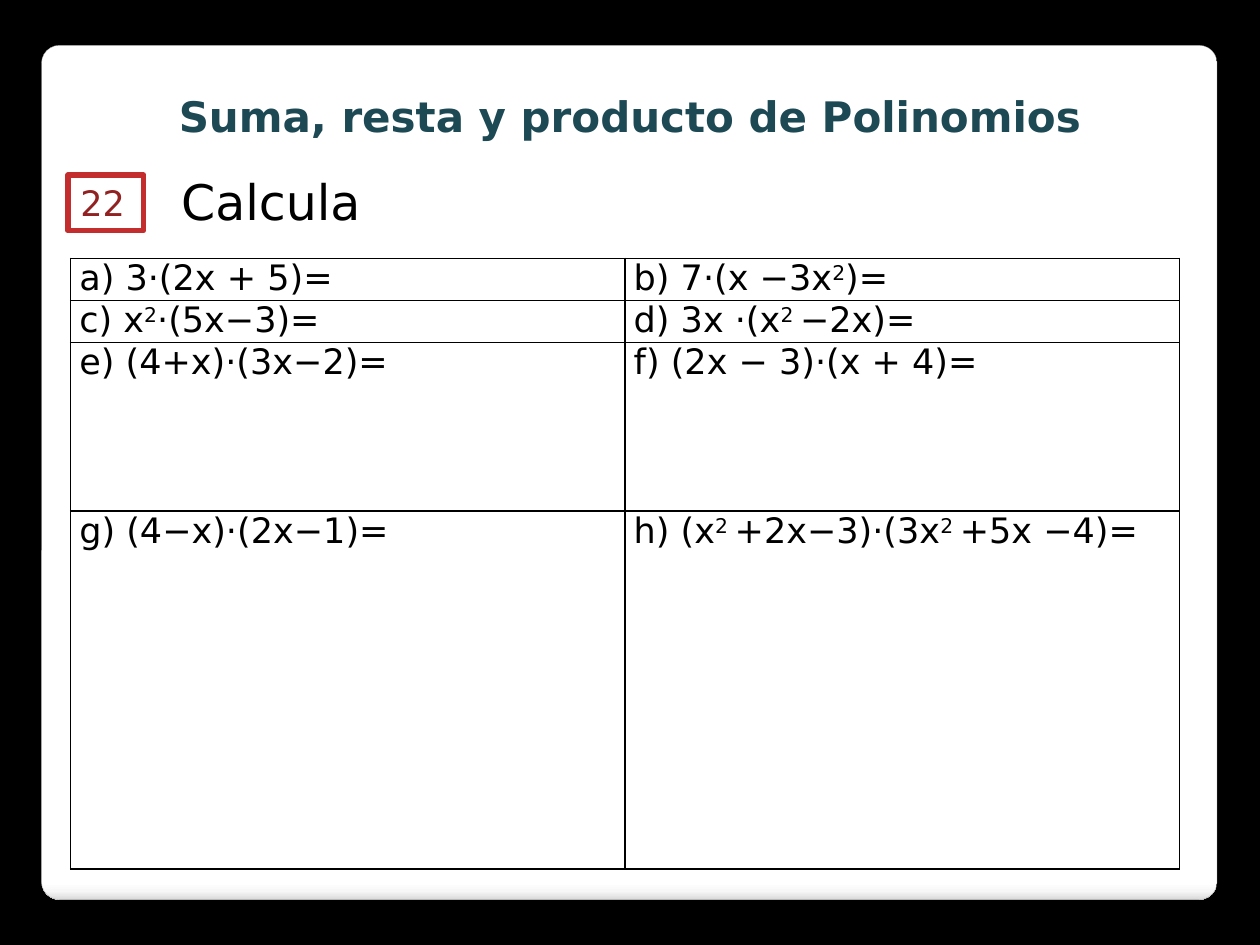
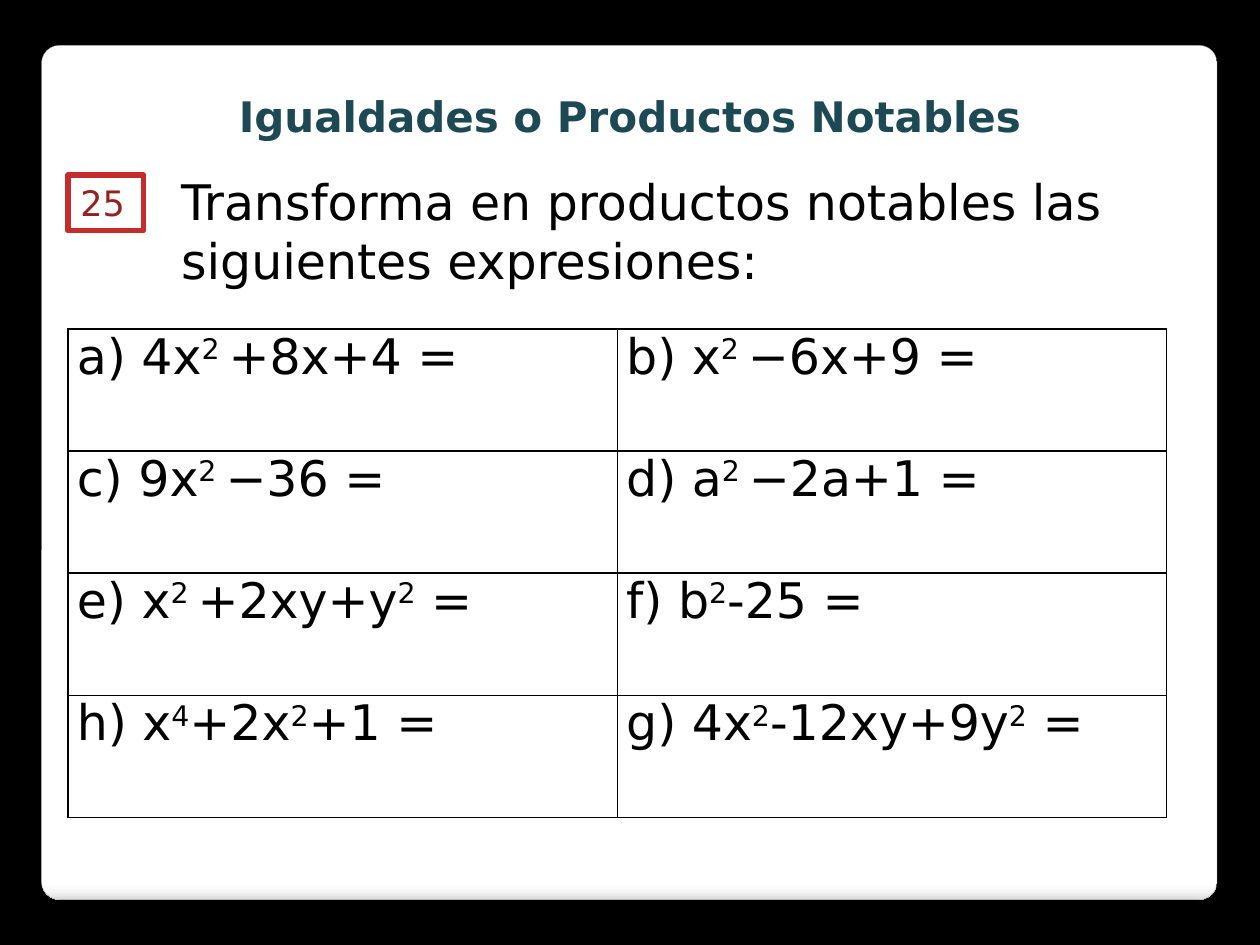
"""Builds two maths worksheet slides: polynomial products and notable products."""
from dataclasses import dataclass

from lxml.etree import SubElement
from pptx import Presentation
from pptx.dml.color import RGBColor
from pptx.enum.shapes import MSO_SHAPE as SHAPE
from pptx.enum.text import MSO_ANCHOR as ANCHOR, PP_ALIGN as ALIGN
from pptx.oxml import parse_xml
from pptx.oxml.ns import nsdecls, qn
from pptx.util import Inches, Pt

FONT = "DejaVu Sans"
COLORS = {
    "background": "000000",
    "paper": "FFFFFF",
    "paper_edge": "F7F7F7",
    "paper_shade": "DADADA",
    "paper_line": "A4A4A4",
    "title": "1C4954",
    "badge_line": "C32D2E",
    "badge_text": "922222",
    "ink": "000000",
}
CARD_STOPS = ((0, "paper"), (98, "paper"), (99, "paper_edge"), (100, "paper_shade"))


@dataclass(frozen=True)
class Exercise:
    """One worksheet slide; exponents in the cells stand between bars."""
    title: str
    number: str
    task: str
    task_height: float
    left: float
    top: float
    col_width: float
    row_heights: tuple[float, ...]
    size: int
    cells: tuple[tuple[str, str], ...]


EXERCISES = (
    Exercise(
        "Suma, resta y producto de Polinomios", "22", "Calcula", 0.57,
        0.56, 2.05, 4.4, (0.33, 0.33, 1.34, 2.84), 20,
        (
            ("a) 3·(2x + 5)=", "b) 7·(x −3x|2|)="),
            ("c) x|2|·(5x−3)=", "d) 3x ·(x|2 |−2x)="),
            ("e) (4+x)·(3x−2)=", "f) (2x − 3)·(x + 4)="),
            ("g) (4−x)·(2x−1)=", "h) (x|2 |+2x−3)·(3x|2 |+5x −4)="),
        ),
    ),
    Exercise(
        "Igualdades o Productos Notables", "25",
        "Transforma en productos notables las siguientes expresiones:", 1.04,
        0.54, 2.61, 4.36, (0.97,) * 4, 28,
        (
            ("a) 4x|2 |+8x+4 =", "b) x|2 |−6x+9 ="),
            ("c) 9x|2 |−36 =", "d) a|2 |−2a+1 ="),
            ("e) x|2 |+2xy+y|2| =", "f) b|2|-25 ="),
            ("h) x|4|+2x|2|+1 =", "g) 4x|2|-12xy+9y|2| ="),
        ),
    ),
)


def rgb(name: str) -> RGBColor:
    """Return the palette colour of that name."""
    return RGBColor.from_string(COLORS[name])


def write(tf, text: str, *, size: int, color: str = "ink", bold: bool = False,
          align=ALIGN.LEFT, anchor=ANCHOR.TOP) -> None:
    """Write one formatted paragraph, raising the parts between bars."""
    tf.word_wrap = True
    tf.vertical_anchor = anchor
    p = tf.paragraphs[0]
    p.alignment = align
    for i, part in enumerate(text.split("|")):
        r = p.add_run()
        r.text = part
        r.font.name, r.font.size, r.font.bold = FONT, Pt(size), bold
        r.font.color.rgb = rgb(color)
        if i % 2:
            r.font._element.set("baseline", "30000")


def place(sp, left: float, top: float, width: float, height: float) -> None:
    """Move and size a shape, in inches."""
    sp.left, sp.top = Inches(left), Inches(top)
    sp.width, sp.height = Inches(width), Inches(height)


def add_box(s, kind, box: tuple[float, ...], line: str, weight: float):
    """Add a paper-coloured preset shape with an outline."""
    sp = s.shapes.add_shape(kind, *map(Inches, box))
    sp.shadow.inherit = False
    sp.fill.solid()
    sp.fill.fore_color.rgb = rgb("paper")
    sp.line.color.rgb = rgb(line)
    sp.line.width = Pt(weight)
    return sp


def set_master(prs, s) -> None:
    """Give the master its black background and the white card, drawn via a slide."""
    master = prs.slide_master
    master.background.fill.solid()
    master.background.fill.fore_color.rgb = rgb("background")
    card = add_box(s, SHAPE.ROUNDED_RECTANGLE, (0.33, 0.36, 9.33, 6.78), "paper_line", 0.16)
    card.adjustments[0] = 0.021
    stops = "".join(
        f'<a:gs pos="{pos * 1000}"><a:srgbClr val="{COLORS[name]}"/></a:gs>'
        for pos, name in CARD_STOPS
    )
    solid = card.element.spPr.find(qn("a:solidFill"))
    solid.getparent().replace(solid, parse_xml(
        f'<a:gradFill {nsdecls("a")} rotWithShape="1"><a:gsLst>{stops}</a:gsLst>'
        '<a:lin ang="5400000" scaled="0"/></a:gradFill>'
    ))
    card.element.nvSpPr.cNvPr.set("id", "20")
    master.shapes.element.insert(2, card.element)


def format_cell(cell, text: str, size: int) -> None:
    """Write a cell and give it black borders on a paper fill."""
    cell.margin_left = cell.margin_right = Inches(0.07)
    cell.margin_top = cell.margin_bottom = 0
    write(cell.text_frame, text, size=size)
    tc_pr = cell._tc.get_or_add_tcPr()
    for side in ("lnL", "lnR", "lnT", "lnB"):
        ln = SubElement(tc_pr, qn(f"a:{side}"), w=str(Pt(1)))
        fill = SubElement(ln, qn("a:solidFill"))
        SubElement(fill, qn("a:srgbClr"), val=COLORS["ink"])
    cell.fill.solid()
    cell.fill.fore_color.rgb = rgb("paper")


def add_grid(s, ex: Exercise) -> None:
    """Add the two-column table of expressions."""
    frame = s.shapes.add_table(
        len(ex.cells), 2, Inches(ex.left), Inches(ex.top),
        Inches(2 * ex.col_width), Inches(sum(ex.row_heights)),
    )
    table = frame.table
    table.first_row = table.horz_banding = False
    for col in table.columns:
        col.width = Inches(ex.col_width)
    for i, (height, texts) in enumerate(zip(ex.row_heights, ex.cells)):
        table.rows[i].height = Inches(height)
        for j, text in enumerate(texts):
            format_cell(table.cell(i, j), text, ex.size)


def add_exercise(prs, ex: Exercise):
    """Add a slide with its title, number badge, task and table."""
    s = prs.slides.add_slide(prs.slide_layouts[5])
    title = s.shapes.title
    place(title, 0.39, 0.67, 9.22, 0.5)
    write(title.text_frame, ex.title, size=24, color="title", bold=True, align=ALIGN.CENTER)
    badge = add_box(s, SHAPE.RECTANGLE, (0.54, 1.39, 0.6, 0.44), "badge_line", 3.35)
    write(badge.text_frame, ex.number, size=20, color="badge_text")
    task = s.shapes.add_textbox(*map(Inches, (1.34, 1.31, 8.27, ex.task_height)))
    write(task.text_frame, ex.task, size=28)
    add_grid(s, ex)
    return s


def main() -> None:
    """Build and save the worksheet."""
    prs = Presentation()
    prs.slide_width, prs.slide_height = Inches(10), Inches(7.5)
    slides = [add_exercise(prs, ex) for ex in EXERCISES]
    set_master(prs, slides[0])
    prs.save("out.pptx")


if __name__ == "__main__":
    main()
